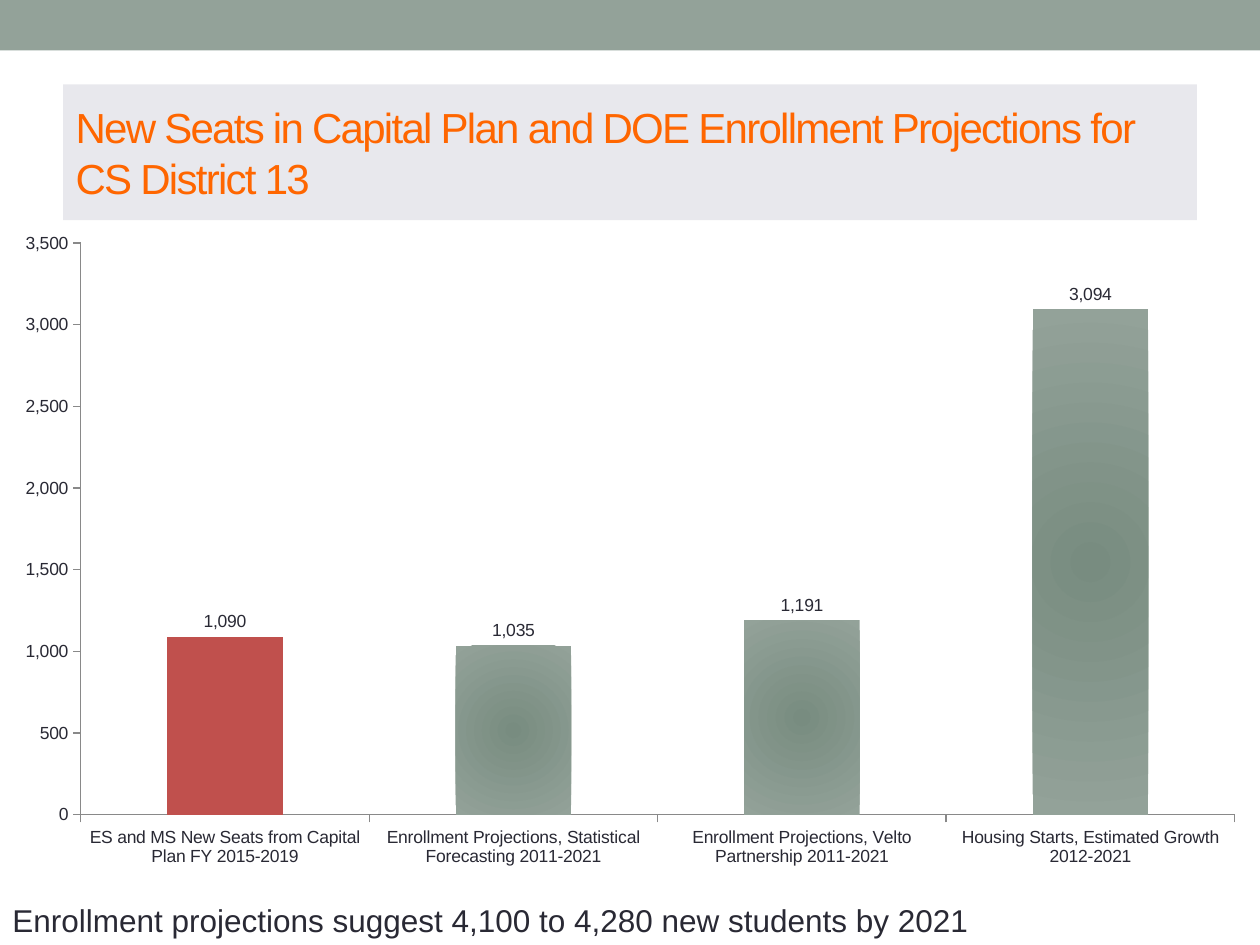
import pptx
import pptx.chart.data
import pptx.dml.color
import pptx.enum.chart
import pptx.enum.shapes
import pptx.enum.text
import pptx.oxml
import pptx.oxml.ns
import pptx.util
from dataclasses import dataclass

Cm = pptx.util.Cm
Pt = pptx.util.Pt


@dataclass(frozen=True)
class Theme:
    font: str = "Arial"
    sage: str = "93A299"
    dark_sage: str = "788C80"
    red: str = "C0504D"
    panel: str = "E8E8ED"
    orange: str = "FF6600"
    ink: str = "292934"
    axis: str = "898989"
    title_size: int = 24
    note_size: int = 18
    chart_size: int = 10


theme = Theme()


def rgb(value):
    return pptx.dml.color.RGBColor.from_string(value)


def style_font(font, size, color):
    font.name = theme.font
    font.size = Pt(size)
    font.color.rgb = rgb(color)


presentation = pptx.Presentation()
presentation.slide_width = Cm(25.4)
presentation.slide_height = Cm(19.05)
slide = presentation.slides.add_slide(presentation.slide_layouts[5])

# Top band
band = slide.shapes.add_shape(
    pptx.enum.shapes.MSO_SHAPE.RECTANGLE, 0, 0, presentation.slide_width, Cm(1.02))
band.shadow.inherit = False
band.fill.solid()
band.fill.fore_color.rgb = rgb(theme.sage)
band.line.fill.background()

# Title panel
title = slide.shapes.title
title.left, title.top, title.width, title.height = Cm(1.27), Cm(1.7), Cm(22.86), Cm(2.74)
title.fill.solid()
title.fill.fore_color.rgb = rgb(theme.panel)
title.text_frame.vertical_anchor = pptx.enum.text.MSO_ANCHOR.MIDDLE
title.text_frame.word_wrap = True
paragraph = title.text_frame.paragraphs[0]
paragraph.alignment = pptx.enum.text.PP_ALIGN.LEFT
run = paragraph.add_run()
run.text = "New Seats in Capital Plan and DOE Enrollment Projections for CS District 13"
style_font(run.font, theme.title_size, theme.orange)
run.font._element.set("spc", "-100")

# Column chart
chart_data = pptx.chart.data.CategoryChartData(number_format="#,##0")
chart_data.categories = [
    "ES and MS New Seats from Capital Plan FY 2015-2019",
    "Enrollment Projections, Statistical Forecasting 2011-2021",
    "Enrollment Projections, Velto Partnership 2011-2021",
    "Housing Starts, Estimated Growth 2012-2021",
]
chart_data.add_series("Series 1", (1090, 1035, 1191, 3094))
chart = slide.shapes.add_chart(
    pptx.enum.chart.XL_CHART_TYPE.COLUMN_CLUSTERED,
    0, Cm(4.45), presentation.slide_width, Cm(13.31), chart_data).chart
chart.has_title = False
chart.has_legend = False
style_font(chart.font, theme.chart_size, theme.ink)

# Plot area position, as shares of the chart
layout = pptx.oxml.parse_xml(
    f'<c:layout {pptx.oxml.ns.nsdecls("c")}><c:manualLayout>'
    '<c:layoutTarget val="inner"/><c:xMode val="edge"/><c:yMode val="edge"/>'
    '<c:x val="0.064"/><c:y val="0.034"/><c:w val="0.916"/><c:h val="0.866"/>'
    '</c:manualLayout></c:layout>')
plot_area = chart._chartSpace.chart.plotArea
for old_layout in plot_area.findall(pptx.oxml.ns.qn("c:layout")):
    plot_area.remove(old_layout)
plot_area.insert(0, layout)

# Axes
for axis in (chart.category_axis, chart.value_axis):
    axis.has_major_gridlines = False
    axis.major_tick_mark = pptx.enum.chart.XL_TICK_MARK.OUTSIDE
    axis.minor_tick_mark = pptx.enum.chart.XL_TICK_MARK.NONE
    axis.format.line.color.rgb = rgb(theme.axis)
    axis.format.line.width = Pt(0.75)
chart.value_axis.minimum_scale = 0
chart.value_axis.maximum_scale = 3500
chart.value_axis.major_unit = 500
chart.value_axis.tick_labels.number_format = "#,##0"
chart.value_axis.tick_labels.number_format_is_linked = False

# Columns: radial sage gradient, first one plain red
plot = chart.plots[0]
plot.gap_width = 150
plot.vary_by_categories = False
series = plot.series[0]
series.invert_if_negative = False
series.format.fill.gradient()
for stop, color in zip(series.format.fill.gradient_stops, (theme.dark_sage, theme.sage)):
    stop.color.rgb = rgb(color)
linear = next(series._element.iter(pptx.oxml.ns.qn("a:lin")))
linear.getparent().replace(linear, pptx.oxml.parse_xml(
    f'<a:path {pptx.oxml.ns.nsdecls("a")} path="circle">'
    '<a:fillToRect l="50000" t="50000" r="50000" b="50000"/></a:path>'))
seats_fill = series.points[0].format.fill
seats_fill.solid()
seats_fill.fore_color.rgb = rgb(theme.red)

# Value labels
labels = series.data_labels
labels.show_value = True
labels.number_format = "#,##0"
labels.number_format_is_linked = False
labels.position = pptx.enum.chart.XL_LABEL_POSITION.OUTSIDE_END

# Conclusion below the chart
note = slide.shapes.add_textbox(0, Cm(18.03), Cm(19.96), Cm(1.02))
note.text_frame.word_wrap = False
note.text_frame.auto_size = pptx.enum.text.MSO_AUTO_SIZE.SHAPE_TO_FIT_TEXT
run = note.text_frame.paragraphs[0].add_run()
run.text = "Enrollment projections suggest 4,100 to 4,280 new students by 2021"
style_font(run.font, theme.note_size, theme.ink)

presentation.save("out.pptx")
